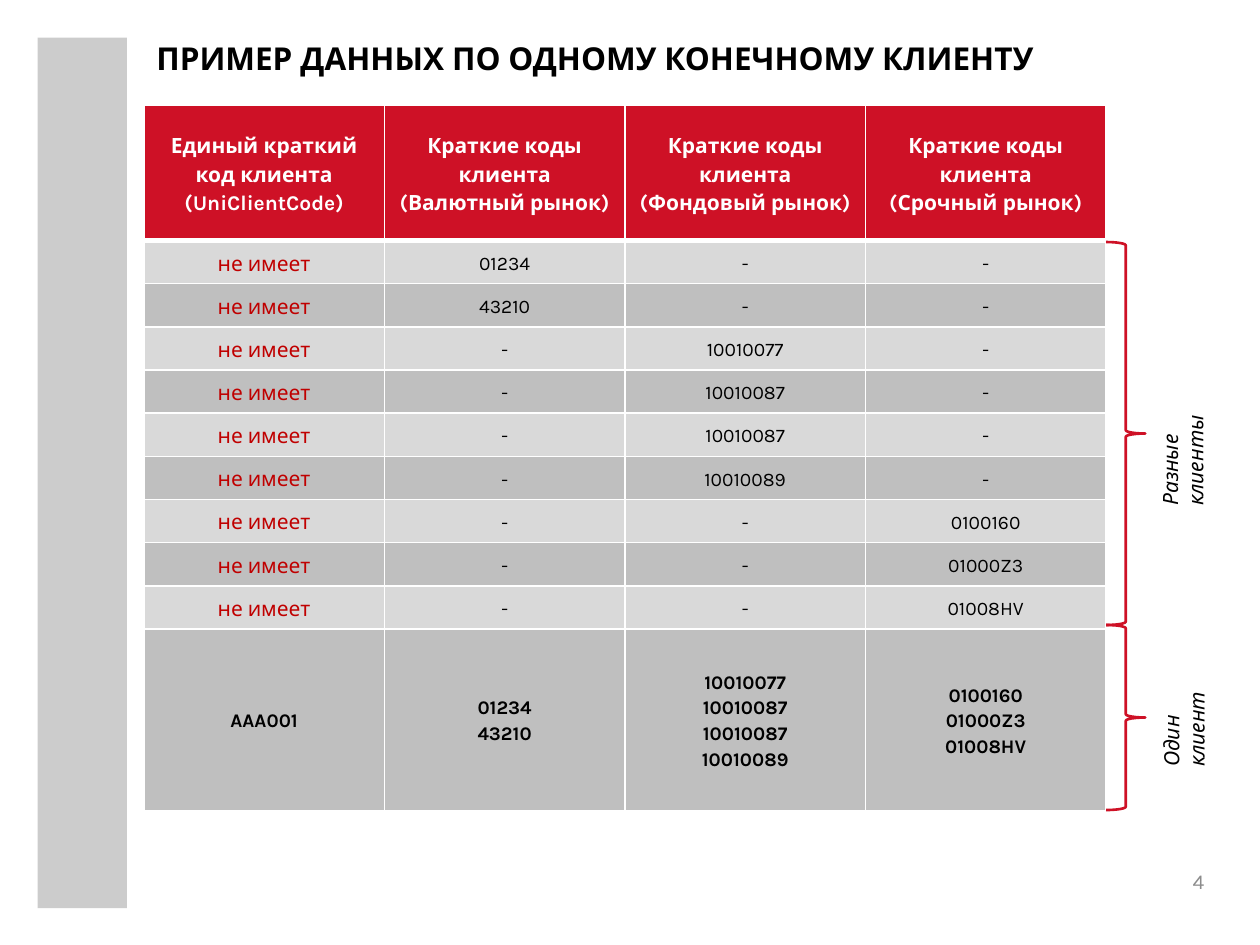
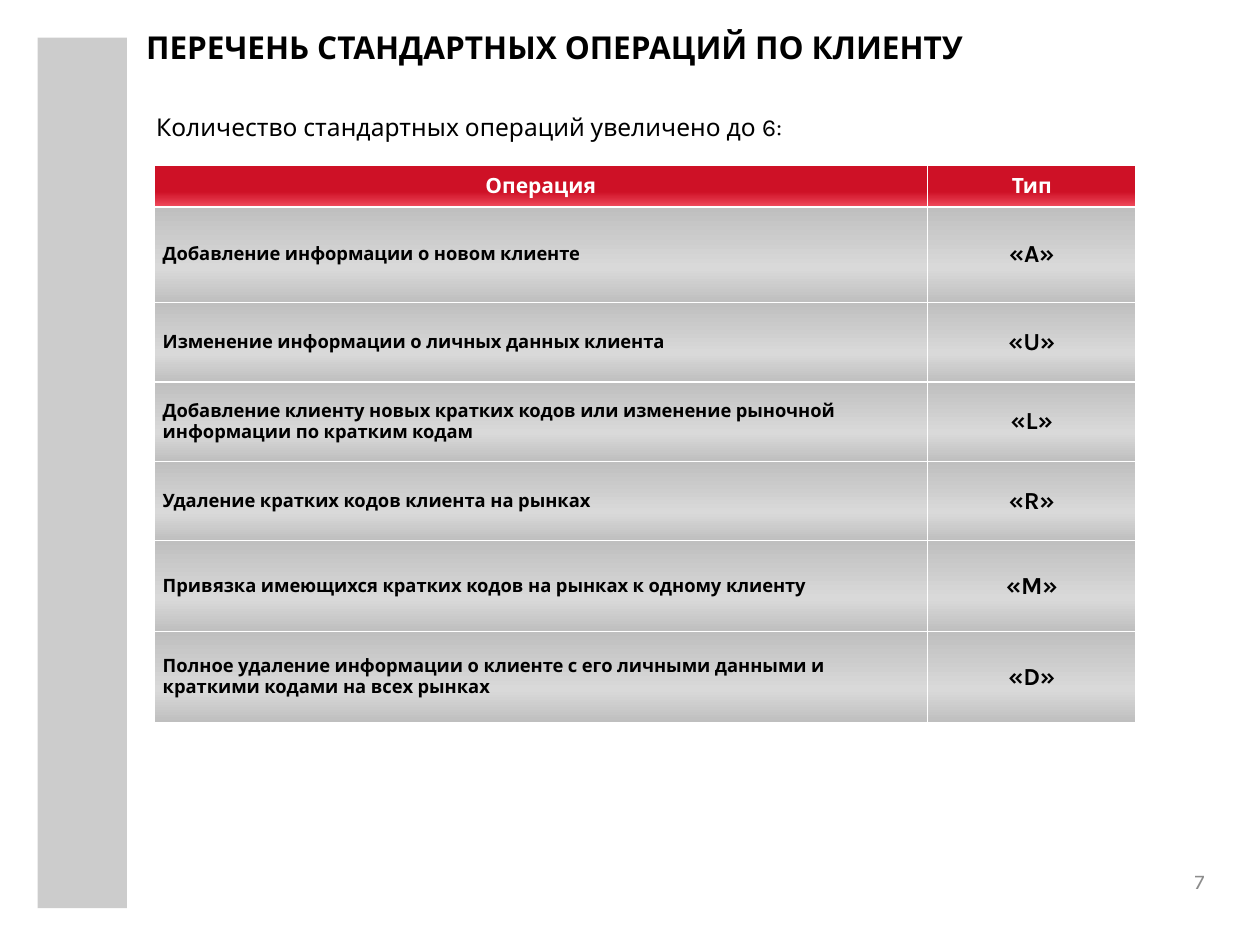
from lxml.etree import SubElement
from pptx import Presentation
from pptx.dml.color import RGBColor
from pptx.enum.shapes import MSO_SHAPE as Shape
from pptx.enum.text import MSO_ANCHOR as Anchor, MSO_AUTO_SIZE as AutoSize, PP_ALIGN as Align
from pptx.oxml.ns import qn
from pptx.util import Cm, Pt

FONT = "Karla"
BLACK = RGBColor(0x00, 0x00, 0x00)
WHITE = RGBColor(0xFF, 0xFF, 0xFF)
RED = RGBColor(0xCE, 0x11, 0x26)
LIGHT_RED = RGBColor(0xF0, 0x4B, 0x5D)
DARK_RED = RGBColor(0xC0, 0x00, 0x00)
BAND_GRAY = RGBColor(0xCC, 0xCC, 0xCC)
LIGHT_GRAY = RGBColor(0xD9, 0xD9, 0xD9)
MID_GRAY = RGBColor(0xBF, 0xBF, 0xBF)
NUMBER_GRAY = RGBColor(0x8C, 0x8C, 0x8C)

HEADER_GRADIENT = ((0, RED), (64, RED), (100, LIGHT_RED))
BODY_GRADIENT = ((0, MID_GRAY), (64, LIGHT_GRAY), (100, MID_GRAY))

MARKET_CODES = (
    ("Валютный рынок", ("01234", "43210")),
    ("Фондовый рынок", ("10010077", "10010087", "10010087", "10010089")),
    ("Срочный рынок", ("0100160", "01000Z3", "01008HV")),
)
OPERATIONS = (
    ("Добавление информации о новом клиенте", "A"),
    ("Изменение информации о личных данных клиента", "U"),
    ("Добавление клиенту новых кратких кодов или изменение рыночной "
     "информации по кратким кодам", "L"),
    ("Удаление кратких кодов клиента на рынках", "R"),
    ("Привязка имеющихся кратких кодов на рынках к одному клиенту", "M"),
    ("Полное удаление информации о клиенте с его личными данными и "
     "краткими кодами на всех рынках", "D"),
)


def write_text(text_frame, text, size, color=BLACK, bold=False, italic=False,
               align=Align.LEFT, spacing=None):
    text_frame.text = text
    for paragraph in text_frame.paragraphs:
        paragraph.alignment = align
        paragraph.line_spacing = spacing
        for run in paragraph.runs:
            font = run.font
            font.name, font.size = FONT, Pt(size)
            font.bold, font.italic = bold, italic
            font.color.rgb = color


def place(shape, left, top, width, height):
    shape.left, shape.top = Cm(left), Cm(top)
    shape.width, shape.height = Cm(width), Cm(height)


def add_label(slide, box, text, size, **style):
    label = slide.shapes.add_textbox(*map(Cm, box))
    label.text_frame.word_wrap = True
    write_text(label.text_frame, text, size, **style)
    return label


def add_base_slide(presentation, title, title_left, title_top, number):
    slide = presentation.slides.add_slide(presentation.slide_layouts[5])
    band = slide.shapes.add_shape(Shape.RECTANGLE, Cm(0.76), Cm(0.76), Cm(1.8), Cm(17.55))
    band.shadow.inherit = False
    band.fill.solid()
    band.fill.fore_color.rgb = BAND_GRAY
    band.line.fill.background()

    heading = slide.shapes.title
    place(heading, title_left, title_top, 20.6, 1.19)
    heading.text_frame.auto_size = AutoSize.NONE
    heading.text_frame.vertical_anchor = Anchor.TOP
    write_text(heading.text_frame, title, 18, bold=True, spacing=0.9)

    page = add_label(slide, (23.29, 17.2, 0.99, 0.99), number, 12,
                     color=NUMBER_GRAY, align=Align.RIGHT)
    page.text_frame.vertical_anchor = Anchor.MIDDLE
    page.text_frame.margin_right = page.text_frame.margin_bottom = 0
    return slide


def add_plain_table(slide, left, top, widths, heights):
    frame = slide.shapes.add_table(len(heights), len(widths), Cm(left), Cm(top),
                                   Cm(sum(widths)), Cm(sum(heights)))
    table = frame.table
    table.first_row = table.horz_banding = False
    for column, width in zip(table.columns, widths):
        column.width = Cm(width)
    for row, height in zip(table.rows, heights):
        row.height = Cm(height)
    return table


def set_borders(cell, bottom_width):
    properties = cell._tc.get_or_add_tcPr()
    for side, width in (("L", 1), ("R", 1), ("T", 1), ("B", bottom_width)):
        line = SubElement(properties, qn(f"a:ln{side}"), w=str(Pt(width)))
        fill = SubElement(line, qn("a:solidFill"))
        SubElement(fill, qn("a:srgbClr"), val=str(WHITE))


def fill_gradient(cell, stops):
    gradient = SubElement(cell._tc.get_or_add_tcPr(), qn("a:gradFill"), rotWithShape="1")
    stop_list = SubElement(gradient, qn("a:gsLst"))
    for position, color in stops:
        stop = SubElement(stop_list, qn("a:gs"), pos=str(position * 1000))
        SubElement(stop, qn("a:srgbClr"), val=str(color))
    SubElement(gradient, qn("a:lin"), ang="5400000", scaled="0")


def fill_cell(cell, text, size, fill, bottom_width=1, **style):
    cell.margin_left = cell.margin_right = Cm(0.18)
    cell.margin_top = cell.margin_bottom = 0
    cell.vertical_anchor = Anchor.MIDDLE
    write_text(cell.text_frame, text, size, **style)
    set_borders(cell, bottom_width)
    if isinstance(fill, RGBColor):
        cell.fill.solid()
        cell.fill.fore_color.rgb = fill
    else:
        fill_gradient(cell, fill)


def add_brace(slide, top, height):
    brace = slide.shapes.add_shape(Shape.RIGHT_BRACE, Cm(22.3), Cm(top), Cm(0.79), Cm(height))
    brace.shadow.inherit = False
    brace.fill.background()
    brace.line.color.rgb = RED
    brace.line.width = Pt(1.5)


def add_side_label(slide, box, text):
    label = add_label(slide, box, text, 12, italic=True)
    label.rotation = 270


def client_rows():
    rows = []
    for market, (_, codes) in enumerate(MARKET_CODES):
        for code in codes:
            cells = ["-"] * len(MARKET_CODES)
            cells[market] = code
            rows.append(["не имеет"] + cells)
    rows.append(["AAA001"] + ["\n".join(codes) for _, codes in MARKET_CODES])
    return rows


def add_client_slide(presentation):
    slide = add_base_slide(presentation, "ПРИМЕР ДАННЫХ ПО ОДНОМУ КОНЕЧНОМУ КЛИЕНТУ",
                           2.9, 0.74, "4")
    rows = client_rows()
    heights = [2.72] + [0.87] * (len(rows) - 1) + [3.66]
    table = add_plain_table(slide, 2.9, 2.13, [4.85] * 4, heights)
    centred = {"align": Align.CENTER, "spacing": 1.15}

    headers = ["Единый краткий код клиента (UniClientCode)"]
    headers += [f"Краткие коды клиента\n({market})" for market, _ in MARKET_CODES]
    for column, header in enumerate(headers):
        fill_cell(table.cell(0, column), header, 12, RED, bottom_width=3,
                  color=WHITE, bold=True, **centred)

    for number, row in enumerate(rows, 1):
        is_united = number == len(rows)
        fill = LIGHT_GRAY if number % 2 else MID_GRAY
        for column, text in enumerate(row):
            is_missing = column == 0 and not is_united
            fill_cell(table.cell(number, column), text, 12 if is_missing else 11, fill,
                      color=DARK_RED if is_missing else BLACK, bold=is_united, **centred)

    add_brace(slide, 4.88, 7.72)
    add_side_label(slide, (21.72, 8.2, 3.73, 0.76), "Разные клиенты")
    add_brace(slide, 12.6, 3.73)
    add_side_label(slide, (22.1, 13.82, 3.02, 0.76), "Один клиент")


def add_operations_slide(presentation):
    slide = add_base_slide(presentation, "ПЕРЕЧЕНЬ СТАНДАРТНЫХ ОПЕРАЦИЙ ПО КЛИЕНТУ",
                           2.69, 0.53, "7")
    add_label(slide, (2.9, 2.13, 19, 1.63),
              "Количество стандартных операций увеличено до 6:", 14)
    table = add_plain_table(slide, 3.1, 3.33, [15.6, 4.2],
                            [0.84, 1.93, 1.6, 1.6, 1.6, 1.83, 1.83])
    for column, header in enumerate(("Операция", "Тип")):
        fill_cell(table.cell(0, column), header, 12, HEADER_GRADIENT,
                  color=WHITE, bold=True, align=Align.CENTER)
    for number, (operation, code) in enumerate(OPERATIONS, 1):
        fill_cell(table.cell(number, 0), operation, 10.5, BODY_GRADIENT, bold=True)
        fill_cell(table.cell(number, 1), f"«{code}»", 14, BODY_GRADIENT,
                  bold=True, align=Align.CENTER)


def main():
    presentation = Presentation()
    presentation.slide_width, presentation.slide_height = Cm(25.4), Cm(19.05)
    add_client_slide(presentation)
    add_operations_slide(presentation)
    presentation.save("out.pptx")


if __name__ == "__main__":
    main()
